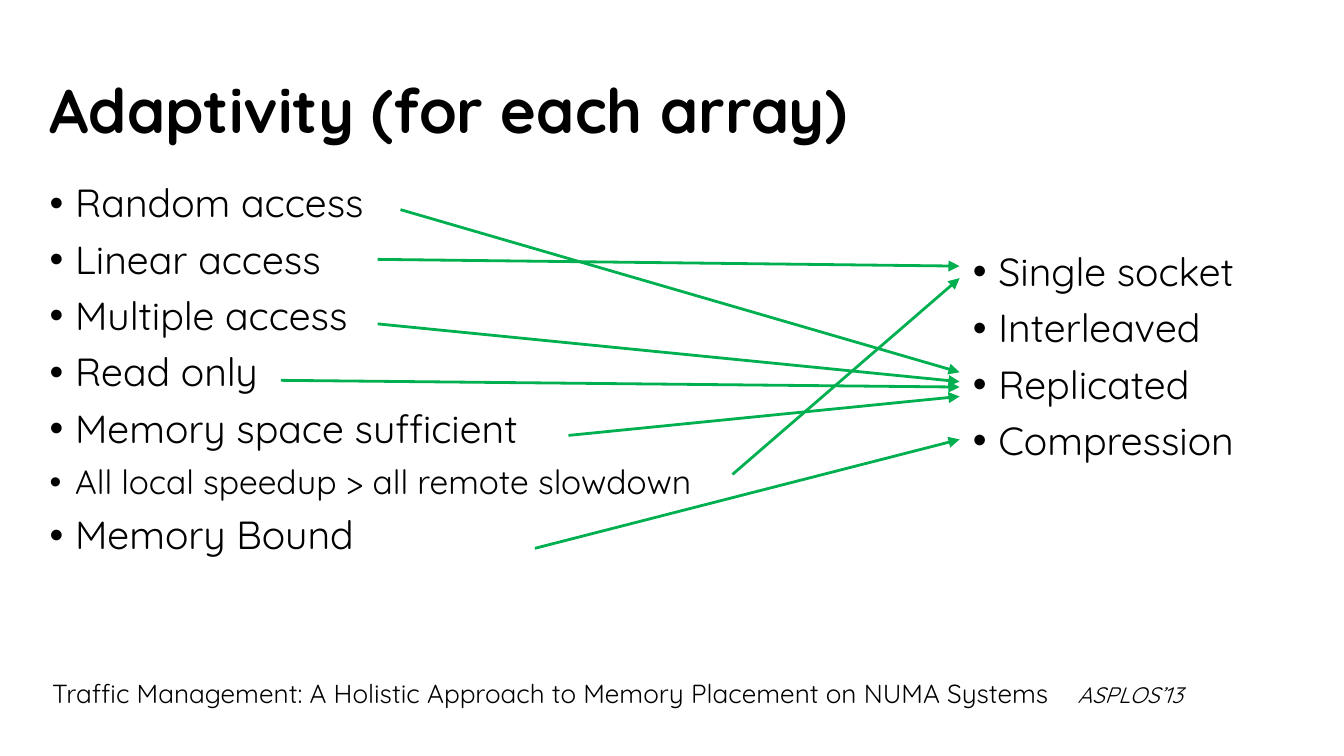
from lxml.etree import SubElement
from pptx import Presentation
from pptx.dml.color import RGBColor
from pptx.enum.shapes import MSO_CONNECTOR as Connector
from pptx.enum.text import MSO_ANCHOR as Anchor
from pptx.oxml.ns import qn
from pptx.util import Inches, Pt

FONT = "Quicksand"
BLACK = RGBColor(0x00, 0x00, 0x00)
GREEN = RGBColor(0x00, 0xB0, 0x50)

TITLE = "Adaptivity (for each array)"
PROPERTIES = [
    ("Random access", 21),
    ("Linear access", 21),
    ("Multiple access", 21),
    ("Read only", 21),
    ("Memory space sufficient", 21),
    ("All local speedup > all remote slowdown", 18),
    ("Memory Bound", 21),
]
PLACEMENTS = [
    ("Single socket", 21),
    ("Interleaved", 21),
    ("Replicated", 21),
    ("Compression", 21),
]
PAPER = "Traffic Management: A Holistic Approach to Memory Placement on NUMA Systems"
VENUE = "ASPLOS’13"
VENUE_TAB = 7.63

# Every arrow ends at the left edge of the placement list: start x, start y, end y
PLACEMENT_LEFT = 7.14
ARROWS = [
    (2.81, 1.93, 1.98),
    (5.45, 3.53, 2.07),
    (4.23, 3.24, 2.95),
    (2.98, 1.56, 2.77),
    (2.81, 2.41, 2.84),
    (2.09, 2.83, 2.88),
    (3.98, 4.08, 3.27),
]


def add_text_frame(page, left, top, width, height):
    box = page.shapes.add_textbox(*map(Inches, (left, top, width, height)))
    box.text_frame.word_wrap = True
    return box.text_frame


def add_span(para, text, size, bold=False, italic=False):
    span = para.add_run()
    span.text = text
    font = span.font
    font.name, font.size, font.bold, font.italic = FONT, Pt(size), bold, italic
    font.color.rgb = BLACK


def add_bullets(page, items, *place):
    frame = add_text_frame(page, *place)
    for index, (text, size) in enumerate(items):
        para = frame.add_paragraph() if index else frame.paragraphs[0]
        para.line_spacing = 0.9
        para.space_before = Pt(7.5)
        properties = para._p.get_or_add_pPr()
        properties.set("marL", str(Inches(0.19)))
        properties.set("indent", str(-Inches(0.19)))
        SubElement(properties, qn("a:buFont"), typeface="Arial")
        SubElement(properties, qn("a:buChar"), char="•")
        add_span(para, text, size)


def add_arrow(page, *ends):
    arrow = page.shapes.add_connector(Connector.STRAIGHT, *map(Inches, ends))
    arrow.line.color.rgb = GREEN
    arrow.line.width = Pt(1.5)
    SubElement(arrow.line._get_or_add_ln(), qn("a:tailEnd"), type="triangle")
    SubElement(arrow._element.spPr, qn("a:effectLst"))


deck = Presentation()
deck.slide_width = Inches(10)
deck.slide_height = deck.slide_width * 9 // 16
page = deck.slides.add_slide(deck.slide_layouts[6])

title = add_text_frame(page, 0.27, 0.3, 8.62, 1.09)
title.vertical_anchor = Anchor.MIDDLE
title.paragraphs[0].line_spacing = 0.9
add_span(title.paragraphs[0], TITLE, 33, bold=True)

add_bullets(page, PROPERTIES, 0.27, 1.32, 9.25, 3.57)
add_bullets(page, PLACEMENTS, PLACEMENT_LEFT, 1.83, 4.4, 3.06)

for start_x, start_y, end_y in ARROWS:
    add_arrow(page, start_x, start_y, PLACEMENT_LEFT, end_y)

citation = add_text_frame(page, 0.29, 4.99, 9.37, 0.34).paragraphs[0]
tabs = SubElement(citation._p.get_or_add_pPr(), qn("a:tabLst"))
SubElement(tabs, qn("a:tab"), pos=str(Inches(VENUE_TAB)), algn="l")
add_span(citation, PAPER + "\t", 14)
add_span(citation, VENUE, 12, italic=True)

deck.save("out.pptx")
